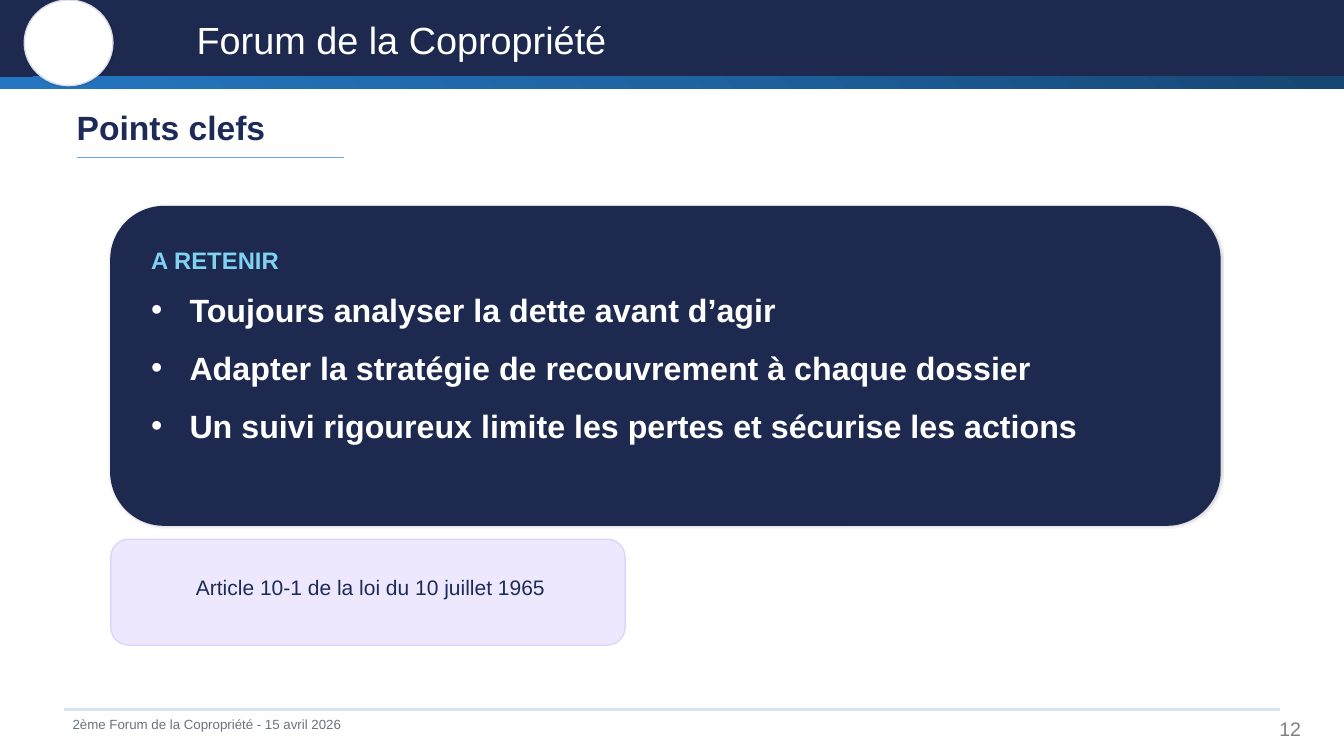
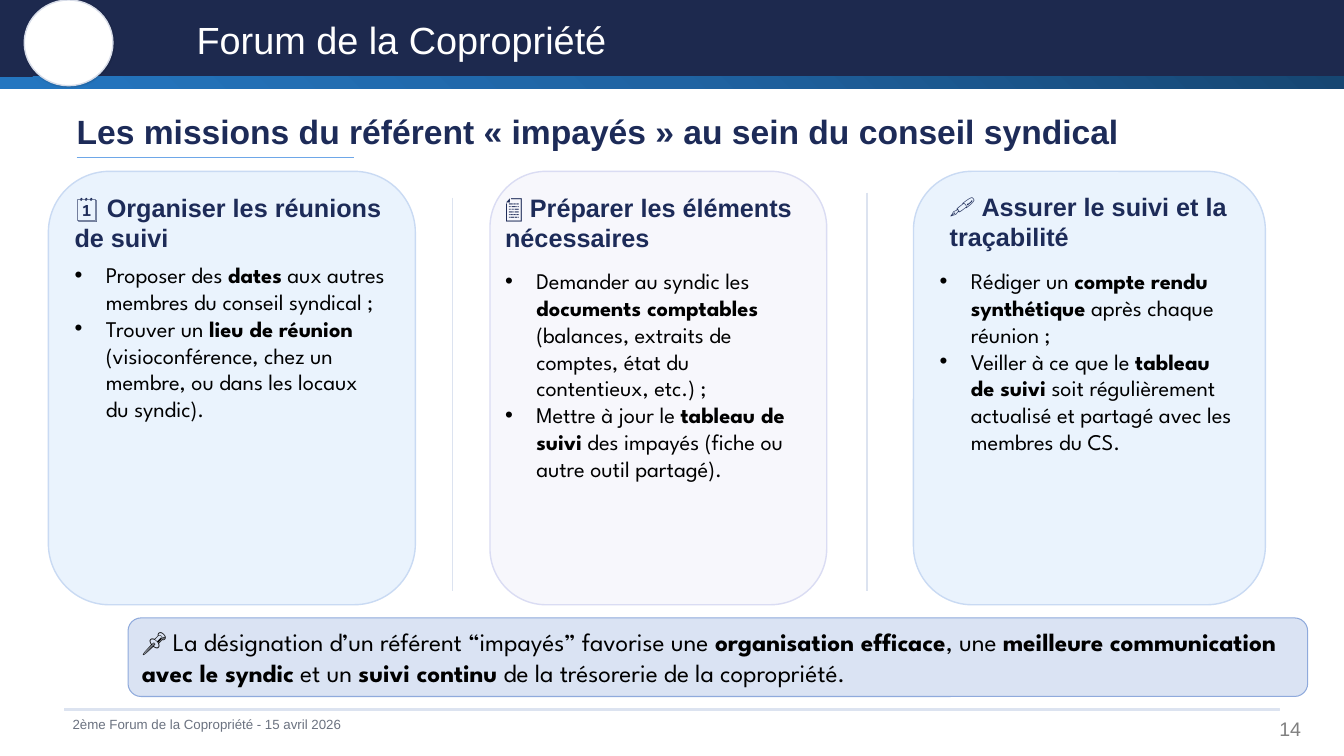
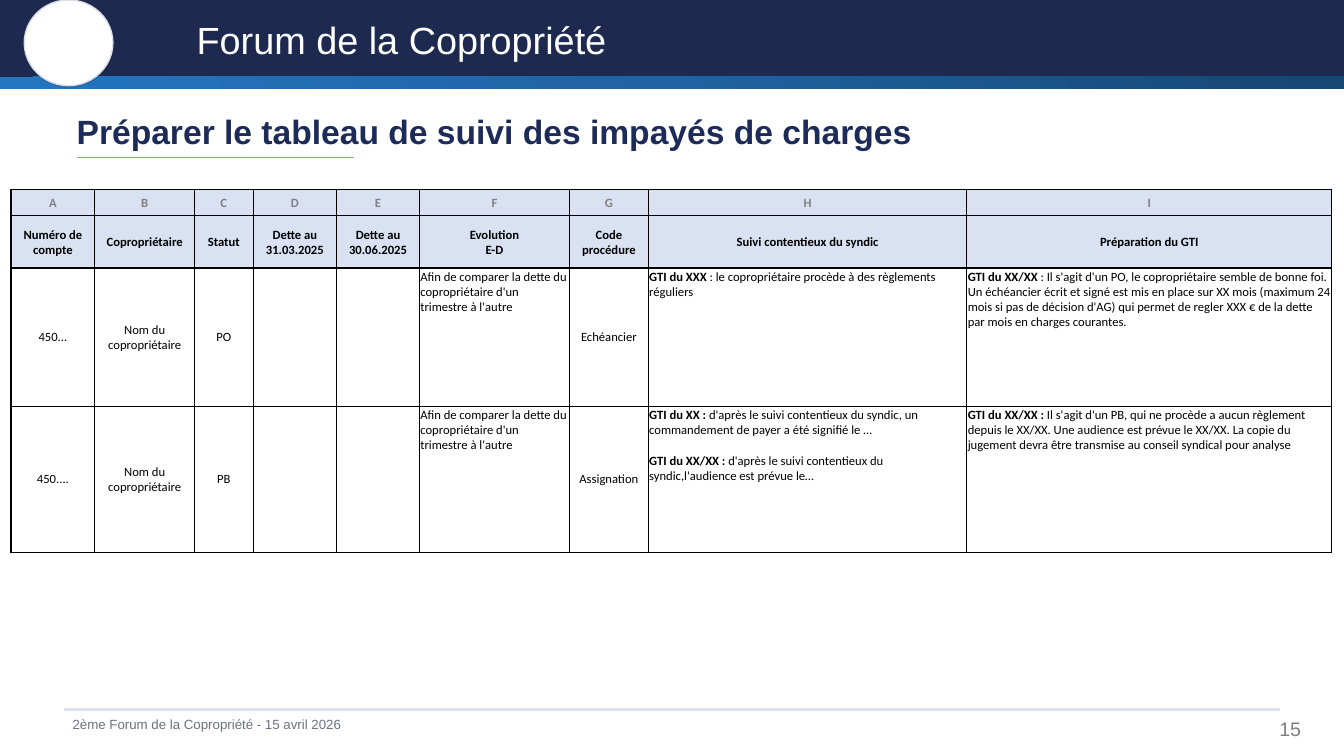
"""Build three slides of the Forum de la Copropriété deck."""
from dataclasses import dataclass

from pptx import Presentation
from pptx.dml.color import RGBColor
from pptx.enum.shapes import MSO_CONNECTOR, MSO_SHAPE
from pptx.enum.text import MSO_ANCHOR, MSO_AUTO_SIZE, PP_ALIGN
from pptx.oxml import parse_xml
from pptx.oxml.ns import nsdecls, qn
from pptx.util import Inches, Pt

RECT, ROUND, OVAL = MSO_SHAPE.RECTANGLE, MSO_SHAPE.ROUNDED_RECTANGLE, MSO_SHAPE.OVAL
TOP, MIDDLE = MSO_ANCHOR.TOP, MSO_ANCHOR.MIDDLE
LEFT, CENTER = PP_ALIGN.LEFT, PP_ALIGN.CENTER
STRAIGHT = MSO_CONNECTOR.STRAIGHT
TITLE_ONLY = 5
WIDTH, HEIGHT = 13.33, 7.5


@dataclass(frozen=True)
class Theme:
    """Colours, fonts and type sizes."""
    navy: str = "1D294E"
    ink: str = "1D2B58"
    white: str = "FFFFFF"
    black: str = "000000"
    grey: str = "808080"
    slate: str = "6B7280"
    rule: str = "DCE3F0"
    accent: str = "6EA7E8"
    cyan: str = "80D2F3"
    ring: str = "D7DCE8"
    lilac: tuple = ("EEE8FF", "DDD4FF")
    sky: tuple = ("EAF3FD", "C9DAF3")
    mist: tuple = ("F7F7FC", "DADCF3")
    note: tuple = ("DAE3F3", "8FAADC")
    table_head: str = "D9E1F2"
    gradient: tuple = ((0, "164672"), (50, "1F63A2"), (100, "2476C0"))
    sans: str = "Arial"
    body_font: str = "League Spartan"
    table_font: str = "Calibri"
    banner: float = 27
    title: float = 24
    key_point: float = 23
    heading: float = 18
    label: float = 17
    body: float = 16
    law: float = 15
    number: float = 14
    footer: float = 9.5
    table: float = 9


THEME = Theme()

BANNER = "Forum de la Copropriété"
FOOTER = "2ème Forum de la Copropriété - 15 avril 2026"

KEY_TITLE = "Points clefs"
KEY_LABEL = "A RETENIR"
KEY_POINTS = [
    "Toujours analyser la dette avant d’agir",
    "Adapter la stratégie de recouvrement à chaque dossier",
    "Un suivi rigoureux limite les pertes et sécurise les actions",
]
LAW = "Article 10-1 de la loi du 10 juillet 1965"

MISSIONS_TITLE = "Les missions du référent « impayés » au sein du conseil syndical"
MISSIONS = [
    dict(card=(0.48, 3.64), colours=THEME.sky,
         heading="🗓️ Organiser les réunions de suivi", heading_at=(0.74, 2.1, 3.34, 0.22),
         body_at=(0.74, 2.59, 3.09, 2.2), body=[
             "Proposer des **dates** aux autres membres du conseil syndical ;",
             "Trouver un **lieu de réunion** (visioconférence, chez un membre, "
             "ou dans les locaux du syndic)."]),
    dict(card=(4.86, 3.34), colours=THEME.mist,
         heading="📄 Préparer les éléments nécessaires", heading_at=(5.01, 2.1, 3.19, 0.22),
         body_at=(5.01, 2.65, 2.85, 2.2), body=[
             "Demander au syndic les **documents comptables** (balances, extraits de "
             "comptes, état du contentieux, etc.) ;",
             "Mettre à jour le **tableau de suivi** des impayés (fiche ou autre outil partagé)."]),
    dict(card=(9.06, 3.49), colours=THEME.sky,
         heading="🖋️ Assurer le suivi et la traçabilité", heading_at=(9.42, 2.07, 2.86, 0.26),
         body_at=(9.32, 2.65, 2.96, 2.2), body=[
             "Rédiger un **compte rendu synthétique** après chaque réunion ;",
             "Veiller à ce que le **tableau de suivi** soit régulièrement actualisé "
             "et partagé avec les membres du CS."]),
]
DIVIDERS = [(4.49, 1.96), (8.6, 1.91)]
MISSIONS_NOTE = ("📌 La désignation d’un référent “impayés” favorise une **organisation efficace**, "
                 "une **meilleure communication avec le syndic** et un **suivi continu** "
                 "de la trésorerie de la copropriété.")

TABLE_TITLE = "Préparer le tableau de suivi des impayés de charges"
COLUMNS = [0.83, 0.99, 0.58, 0.83, 0.82, 1.49, 0.78, 3.16, 3.62]
ROWS = [0.26, 0.52, 1.37, 1.45]
PROSE_COLUMNS = (5, 7, 8)
COMPARE = "Afin de comparer la dette du copropriétaire d'un trimestre à l'autre"
CELLS = [
    list("ABCDEFGHI"),
    ["Numéro de compte", "Copropriétaire", "Statut", "Dette au 31.03.2025",
     "Dette au 30.06.2025", ["Evolution", "E-D"], "Code procédure",
     "Suivi contentieux du syndic", "Préparation du GTI"],
    ["450...", "Nom du copropriétaire", "PO", "", "", COMPARE, "Echéancier",
     "**GTI du XXX **: le copropriétaire procède à des règlements réguliers",
     "**GTI du XX/XX **: Il s'agit d'un PO, le copropriétaire semble de bonne foi. Un "
     "échéancier écrit et signé est mis en place sur XX mois (maximum 24 mois si pas de "
     "décision d'AG) qui permet de regler XXX € de la dette par mois en charges courantes."],
    ["450....", "Nom du copropriétaire", "PB", "", "", COMPARE, "Assignation",
     ["**GTI du XX :** d'après le suivi contentieux du syndic, un commandement de payer "
      "a été signifié le …",
      "**GTI du XX/XX :** d'après le suivi contentieux du syndic,l'audience est prévue le…"],
     "**GTI du XX/XX :** Il s'agit d'un PB, qui ne procède a aucun règlement depuis le "
     "XX/XX. Une audience est prévue le XX/XX. La copie du jugement devra être transmise "
     "au conseil syndical pour analyse"],
]


def rgb(colour):
    """Turn a hex string into a colour."""
    return RGBColor.from_string(colour)


def inches(*lengths):
    """Turn numbers into lengths."""
    return [Inches(length) for length in lengths]


def write(frame, text, size, colour=THEME.black, font=THEME.sans, bold=False, align=LEFT,
          anchor=MIDDLE, insets=(0, 0, 0, 0), indent=0, spacing=None, gap=0):
    """Fill a text frame; ** switches bold on and off, indent adds bullets."""
    frame.word_wrap = True
    frame.auto_size = MSO_AUTO_SIZE.NONE
    frame.vertical_anchor = anchor
    (frame.margin_left, frame.margin_top,
     frame.margin_right, frame.margin_bottom) = inches(*insets)
    lines = [text] if isinstance(text, str) else text
    for index, line in enumerate(lines):
        para = frame.paragraphs[0] if index == 0 else frame.add_paragraph()
        para.alignment = align
        para.space_before = Pt(gap if index else 0)
        if spacing:
            para.line_spacing = spacing
        if indent:
            props = para._p.get_or_add_pPr()
            props.set("marL", str(Inches(indent)))
            props.set("indent", str(-Inches(indent)))
            props.append(parse_xml(f'<a:buFont {nsdecls("a")} typeface="Arial"/>'))
            props.append(parse_xml(f'<a:buChar {nsdecls("a")} char="•"/>'))
        for part, words in enumerate(line.split("**")):
            if words:
                span = para.add_run()
                span.text = words
                span.font.size, span.font.name = Pt(size), font
                span.font.bold = bold or part % 2 == 1
                span.font.color.rgb = rgb(colour)


def add_text(page, at, text, **style):
    """Add a text box."""
    box = page.shapes.add_textbox(*inches(*at))
    write(box.text_frame, text, **style)
    return box


def add_box(page, kind, at, fill, line=None, weight=1, shadow=None):
    """Add a filled shape; shadow is opacity, blur and distance."""
    box = page.shapes.add_shape(kind, *inches(*at))
    box.fill.solid()
    box.fill.fore_color.rgb = rgb(fill)
    if line:
        box.line.color.rgb = rgb(line)
        box.line.width = Pt(weight)
    else:
        box.line.fill.background()
    box.shadow.inherit = False
    if shadow:
        opacity, blur, distance = shadow
        box.element.spPr.find(qn("a:effectLst")).append(parse_xml(
            f'<a:outerShdw {nsdecls("a")} blurRad="{Pt(blur)}" dist="{Pt(distance)}" '
            f'dir="2700000" algn="tl" rotWithShape="0"><a:srgbClr val="{THEME.black}">'
            f'<a:alpha val="{opacity * 1000}"/></a:srgbClr></a:outerShdw>'))
    return box


def add_line(page, start, end, colour):
    """Add a thin straight line."""
    line = page.shapes.add_connector(STRAIGHT, *inches(*start, *end))
    line.line.color.rgb = rgb(colour)
    line.line.width = Pt(1)
    line.element.spPr.append(parse_xml(f'<a:effectLst {nsdecls("a")}/>'))


def add_gradient_band(page, at):
    """Add the band that darkens towards its top right corner."""
    band = add_box(page, RECT, at, THEME.navy)
    stops = "".join(f'<a:gs pos="{place * 1000}"><a:srgbClr val="{colour}"/></a:gs>'
                    for place, colour in THEME.gradient)
    props = band.element.spPr
    props.replace(props.find(qn("a:solidFill")), parse_xml(
        f'<a:gradFill {nsdecls("a")} rotWithShape="1"><a:gsLst>{stops}</a:gsLst>'
        '<a:path path="circle"><a:fillToRect l="100000" b="100000"/></a:path></a:gradFill>'))
    return band


def dress_layout(layout, page):
    """Draw the shared bands and footer once and move them to the layout."""
    parts = [
        add_box(page, RECT, (0, 0, WIDTH, 0.76), THEME.navy, THEME.navy),
        add_box(page, RECT, (0.64, 7.03, 12.05, 0.02), THEME.rule, THEME.rule),
        add_text(page, (0.72, 7.09, 4.8, 0.18), FOOTER, size=THEME.footer, colour=THEME.slate),
        add_gradient_band(page, (0, 0.76, WIDTH, 0.12)),
        add_box(page, OVAL, (0.24, 0, 0.88, 0.85), THEME.white, THEME.ring,
                shadow=(15, 1.2, 0.5)),
        add_text(page, (1.95, 0.19, 5.9, 0.4), BANNER, size=THEME.banner, colour=THEME.white),
    ]
    for part in parts:
        layout.shapes.element.append(part.element)


def start_page(page, title, number, title_at=(0.76, 1.19, 10.95, 0.22), underline=2.75):
    """Set the title, its underline and the page number."""
    heading = page.shapes.title
    heading.left, heading.top, heading.width, heading.height = inches(*title_at)
    write(heading.text_frame, title, size=THEME.title, colour=THEME.ink, bold=True)
    add_line(page, (0.76, 1.56), (0.76 + underline, 1.56), THEME.accent)
    add_text(page, (12.59, 7.06, 0.83, 0.34), str(number), size=THEME.number,
             colour=THEME.grey, anchor=TOP, insets=(0.1, 0.05, 0.1, 0.05))


def build_key_points(page):
    """Fill the slide of points to remember."""
    start_page(page, KEY_TITLE, 12, (0.76, 1.1, 6.3, 0.32), 2.65)
    add_box(page, ROUND, (1.1, 2.05, 11, 3.16), THEME.navy, THEME.navy, shadow=(16, 1.4, 0.5))
    add_text(page, (1.5, 2.48, 2.2, 0.2), KEY_LABEL, size=THEME.label,
             colour=THEME.cyan, bold=True)
    add_text(page, (1.5, 2.69, 9.8, 1.72), KEY_POINTS, size=THEME.key_point,
             colour=THEME.white, bold=True, indent=0.38, spacing=1.5)
    add_box(page, ROUND, (1.1, 5.35, 5.1, 1.05), *THEME.lilac)
    add_text(page, (1.45, 5.73, 4.45, 0.18), LAW, size=THEME.law,
             colour=THEME.ink, align=CENTER)


def build_missions(page):
    """Fill the slide of three mission cards."""
    start_page(page, MISSIONS_TITLE, 14)
    for mission in MISSIONS:
        left, width = mission["card"]
        add_box(page, ROUND, (left, 1.7, width, 4.3), *mission["colours"])
        add_text(page, mission["heading_at"], mission["heading"], size=THEME.heading,
                 colour=THEME.ink, bold=True)
        add_text(page, mission["body_at"], mission["body"], size=THEME.body,
                 font=THEME.body_font, anchor=TOP, indent=0.31)
    for x, top in DIVIDERS:
        add_line(page, (x, top), (x, 5.86), THEME.rule)
    note = add_box(page, ROUND, (1.27, 6.13, 11.7, 0.78), *THEME.note, weight=0.75)
    write(note.text_frame, MISSIONS_NOTE, size=THEME.heading, font=THEME.body_font,
          anchor=TOP, insets=(0.1, 0.05, 0.1, 0.05))


def set_borders(cell, **weights):
    """Give each side of a cell a black line of the given weight."""
    props = cell._tc.get_or_add_tcPr()
    for index, (side, weight) in enumerate(weights.items()):
        props.insert(index, parse_xml(
            f'<a:{side} {nsdecls("a")} w="{Pt(weight)}"><a:solidFill>'
            f'<a:srgbClr val="{THEME.black}"/></a:solidFill></a:{side}>'))


def build_table(page):
    """Fill the slide of the follow-up table."""
    start_page(page, TABLE_TITLE, 15)
    table = page.shapes.add_table(len(ROWS), len(COLUMNS), *inches(
        0.11, 1.88, sum(COLUMNS), sum(ROWS))).table
    table.first_row = table.horz_banding = False
    for column, width in zip(table.columns, COLUMNS):
        column.width = Inches(width)
    for r, (row, height) in enumerate(zip(table.rows, ROWS)):
        row.height = Inches(height)
        head = r < 2
        for c, text in enumerate(CELLS[r]):
            cell = table.cell(r, c)
            prose = not head and c in PROSE_COLUMNS
            write(cell.text_frame, text, size=THEME.table, font=THEME.table_font, bold=head,
                  colour=THEME.black if r else THEME.grey, align=LEFT if prose else CENTER,
                  gap=0 if head else 11)
            (cell.margin_left, cell.margin_top,
             cell.margin_right, cell.margin_bottom) = inches(0.01, 0.01, 0.01, 0)
            cell.vertical_anchor = TOP if prose else MIDDLE
            if head:
                cell.fill.solid()
                cell.fill.fore_color.rgb = rgb(THEME.table_head)
            else:
                cell.fill.background()
            set_borders(cell, lnL=0.5 if c else 1, lnR=1 if c == len(COLUMNS) - 1 else 0.5,
                        lnT=1 if r < 3 else 0.5, lnB=0.5 if r == 2 else 1)


def main():
    """Build and save the deck."""
    deck = Presentation()
    deck.slide_width, deck.slide_height = inches(WIDTH, HEIGHT)
    layout = deck.slide_layouts[TITLE_ONLY]
    builders = [build_key_points, build_missions, build_table]
    pages = [deck.slides.add_slide(layout) for _ in builders]
    dress_layout(layout, pages[0])
    for build, page in zip(builders, pages):
        build(page)
    deck.save("out.pptx")


if __name__ == "__main__":
    main()
